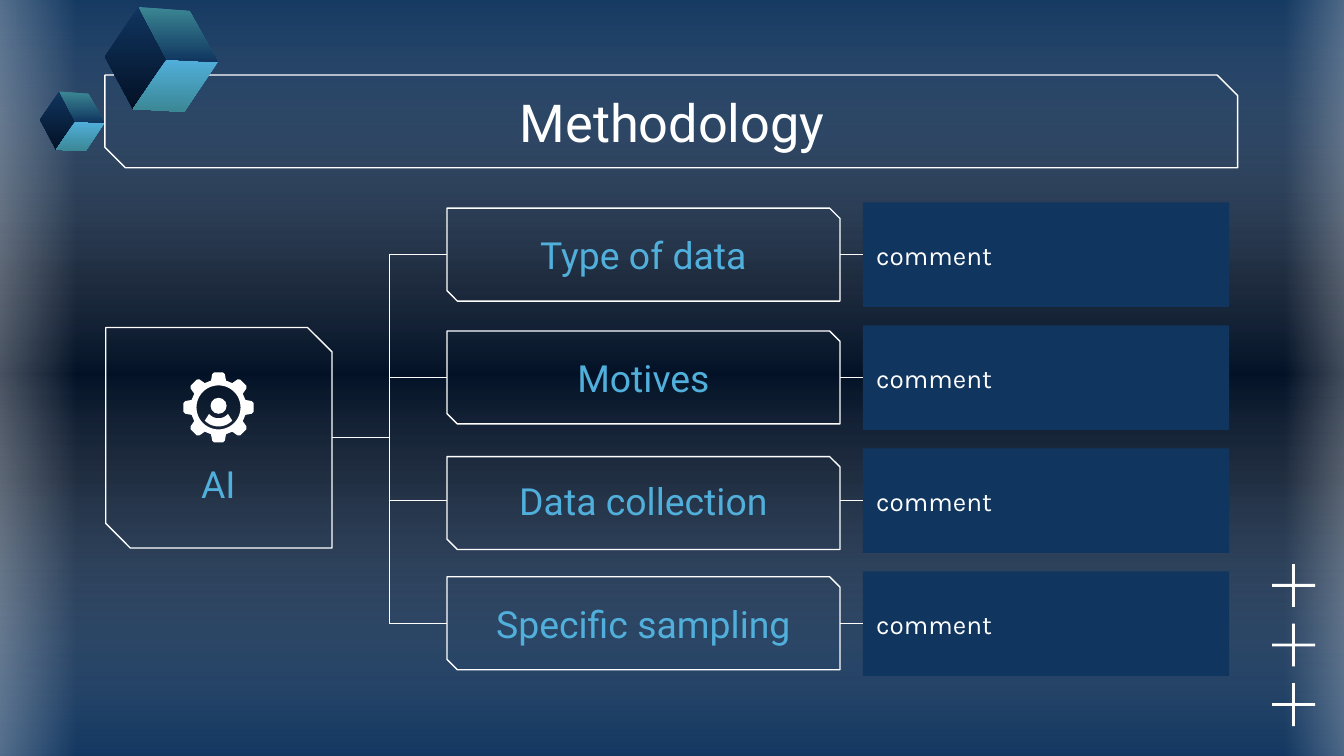
import math

import lxml.etree
import pptx
import pptx.dml.color
import pptx.enum.shapes
import pptx.enum.text
import pptx.oxml.ns
import pptx.util

Pt = pptx.util.Pt
qn = pptx.oxml.ns.qn
SHAPE = pptx.enum.shapes.MSO_SHAPE
CONNECTOR = pptx.enum.shapes.MSO_CONNECTOR
ALIGN = pptx.enum.text.PP_ALIGN

COLOURS = {
    "white": "FFFFFF",
    "navy": "10355F",
    "night": "031126",
    "sky": "51AFDB",
    "teal": "3B8794",
}

# Label of each row and the top of its frame
ROWS = [
    ("Type of data", 111.5),
    ("Motives", 177.3),
    ("Data collection", 244.6),
    ("Specific sampling", 309),
]
FIRST_ROW_MIDDLE, ROW_PITCH = 136.4, 65.9
LABEL_LEFT, LABEL_WIDTH = 239.5, 210.5

# Cube corners from its top left, and the faces they bound
CORNERS = {
    "a": (18, 0), "b": (0, 26.7), "c": (15.1, 54.7), "d": (33.1, 28.1),
    "e": (60.5, 29.5), "f": (42.5, 56.2), "g": (45.4, 2.2),
}
FACES = [("abcd", "navy", "night"), ("defc", "sky", "teal"), ("aged", "teal", "navy")]


def rgb(name):
    return pptx.dml.color.RGBColor.from_string(COLOURS[name])


def paint_gradient(fill, properties, stops, angle):
    """Fill with (position, colour, opacity) stops, all in percent."""
    fill.solid()
    solid = properties.find(qn("a:solidFill"))
    gradient = lxml.etree.Element(qn("a:gradFill"), rotWithShape="1")
    stop_list = lxml.etree.SubElement(gradient, qn("a:gsLst"))
    for position, name, opacity in stops:
        stop = lxml.etree.SubElement(stop_list, qn("a:gs"), pos=str(position * 1000))
        colour = lxml.etree.SubElement(stop, qn("a:srgbClr"), val=COLOURS[name])
        if opacity < 100:
            lxml.etree.SubElement(colour, qn("a:alpha"), val=str(opacity * 1000))
    lxml.etree.SubElement(gradient, qn("a:lin"), ang=str(angle * 60000), scaled="0")
    properties.replace(solid, gradient)


def add_block(shapes, kind, left, top, width, height, fill=None, line=None):
    block = shapes.add_shape(kind, Pt(left), Pt(top), Pt(width), Pt(height))
    block.shadow.inherit = False
    if fill:
        block.fill.solid()
        block.fill.fore_color.rgb = rgb(fill)
    else:
        block.fill.background()
    if line:
        block.line.color.rgb = rgb(line)
        block.line.width = Pt(0.75)
    else:
        block.line.fill.background()
    return block


def add_frame(shapes, left, top, width, height, snip=0.111):
    frame = add_block(shapes, SHAPE.SNIP_2_DIAG_RECTANGLE, left, top, width, height, line="white")
    frame.adjustments[0] = 0
    frame.adjustments[1] = snip


def add_glow(shapes, left, top, width, height, stops, rotation=0):
    glow = add_block(shapes, SHAPE.RECTANGLE, left, top, width, height)
    glow.rotation = rotation
    paint_gradient(glow.fill, glow.element.spPr, stops, 180)


def write(box, text, size, font, colour, align=ALIGN.CENTER):
    frame = box.text_frame
    frame.word_wrap = True
    frame.vertical_anchor = pptx.enum.text.MSO_ANCHOR.MIDDLE
    frame.margin_left = frame.margin_right = Pt(7.2)
    frame.margin_top = frame.margin_bottom = Pt(7.2)
    para = frame.paragraphs[0]
    para.alignment = align
    span = para.add_run()
    span.text = text
    span.font.size = Pt(size)
    span.font.name = font
    span.font.color.rgb = rgb(colour)


def add_text(shapes, text, left, top, width, height, size=20, colour="sky"):
    box = shapes.add_textbox(Pt(left), Pt(top), Pt(width), Pt(height))
    write(box, text, size, "Roboto", colour)
    return box


def add_link(shapes, kind, start, end):
    link = shapes.add_connector(kind, *(Pt(value) for value in start + end))
    link.line.color.rgb = rgb("white")
    link.line.width = Pt(0.75)
    lxml.etree.SubElement(link.element.spPr, qn("a:effectLst"))
    return link


def add_outline(shapes, *contours):
    contours = [[(Pt(x), Pt(y)) for x, y in contour] for contour in contours]
    builder = shapes.build_freeform(*contours[0][0], scale=1.0)
    for number, contour in enumerate(contours):
        if number:
            builder.move_to(*contour[0])
        builder.add_line_segments(contour[1:], close=True)
    outline = builder.convert_to_shape()
    outline.shadow.inherit = False
    outline.line.fill.background()
    outline.fill.solid()
    outline.fill.fore_color.rgb = rgb("white")
    return outline


def arc(x, y, radius, first, last, steps):
    angles = [math.radians(first + (last - first) * i / steps) for i in range(steps + 1)]
    return [(x + radius * math.cos(a), y + radius * math.sin(a)) for a in angles]


def add_gear(slide, x, y):
    shapes = slide.shapes.add_group_shape().shapes
    tooth = [(14.4, -4), (17.8, -3.4), (18.8, -2.3), (18.8, 2.3), (17.8, 3.4), (14.4, 4)]
    rim = []
    for turn in range(8):
        cos, sin = math.cos(turn * math.pi / 4), math.sin(turn * math.pi / 4)
        rim += [(x + u * cos - v * sin, y + u * sin + v * cos) for u, v in tooth]
    add_outline(shapes, rim, arc(x, y, 11.8, 360, 0, 48))
    add_block(shapes, SHAPE.OVAL, x - 4.3, y - 5.2, 8.6, 8.6, fill="white")
    add_outline(shapes, arc(x, y, 10.2, 44, 136, 16) + arc(x, y - 0.8, 6.6, 140, 40, 16))


def add_cube(slide, left, top, scale):
    shapes = slide.shapes.add_group_shape().shapes
    for corners, first, last in FACES:
        points = [(left + CORNERS[c][0] * scale, top + CORNERS[c][1] * scale) for c in corners]
        face = add_outline(shapes, points)
        paint_gradient(face.fill, face.element.spPr, [(0, first, 100), (100, last, 100)], 90)


def add_pluses(slide, x, first_y, pitch, count, size=23, thickness=1.6):
    shapes = slide.shapes.add_group_shape().shapes
    for number in range(count):
        y = first_y + number * pitch
        for width, height in ((size, thickness), (thickness, size)):
            add_block(shapes, SHAPE.RECTANGLE, x - width / 2, y - height / 2,
                      width, height, fill="white")


def add_backdrop(slide):
    fill = slide.background.fill
    fill.solid()
    properties = slide.element.find(".//" + qn("p:bgPr"))
    paint_gradient(fill, properties, [(0, "navy", 100), (37, "night", 100),
                                      (63, "night", 100), (100, "navy", 100)], 90)
    haze = [(0, "navy", 59), (50, "white", 0), (100, "navy", 59)]
    edge = [(0, "white", 47), (100, "white", 0)]
    add_glow(slide.shapes, 158.4, -167.8, 418.3, 735.1, haze, 270)
    add_glow(slide.shapes, -29.5, -6.5, 70.6, 417.6, edge, 180)
    add_glow(slide.shapes, 688.3, -9.4, 61.2, 417.6, edge)


def add_row(shapes, number, label, frame_top):
    middle = FIRST_ROW_MIDDLE + number * ROW_PITCH
    right = LABEL_LEFT + LABEL_WIDTH
    add_frame(shapes, LABEL_LEFT, frame_top, LABEL_WIDTH, 49.8)
    comment = add_block(shapes, SHAPE.RECTANGLE, 462.3, middle - 28, 196.2, 56, fill="navy")
    write(comment, "comment", 14, "Karla", "white", ALIGN.LEFT)
    box = add_text(shapes, label, LABEL_LEFT, middle - 22, LABEL_WIDTH, 44)
    branch = add_link(shapes, CONNECTOR.ELBOW, (178, 234.5), (LABEL_LEFT, middle))
    branch.end_connect(box, 1)
    link = add_link(shapes, CONNECTOR.STRAIGHT, (right, middle), (462.3, middle))
    link.begin_connect(box, 3)
    link.end_connect(comment, 1)


def main():
    deck = pptx.Presentation()
    deck.slide_width, deck.slide_height = Pt(720), Pt(405)
    slide = deck.slides.add_slide(deck.slide_layouts[6])
    shapes = slide.shapes
    add_backdrop(slide)

    # Title
    add_frame(shapes, 56.2, 40.2, 606.8, 49.7, snip=0.221)
    add_text(shapes, "Methodology", 56.6, 42.5, 606.8, 45.4, size=28, colour="white")

    # Root of the tree and its rows
    add_frame(shapes, 56.7, 175.5, 121.2, 118.1)
    add_text(shapes, "AI", 61.9, 240.5, 110.2, 37.4)
    for number, (label, frame_top) in enumerate(ROWS):
        add_row(shapes, number, label, frame_top)

    # Decoration
    add_gear(slide, 117.1, 218.3)
    add_pluses(slide, 693, 313.7, 31.9, 3)
    add_cube(slide, 56.2, 3.7, 1)
    add_cube(slide, 21.5, 49, 0.57)

    deck.save("out.pptx")


if __name__ == "__main__":
    main()
